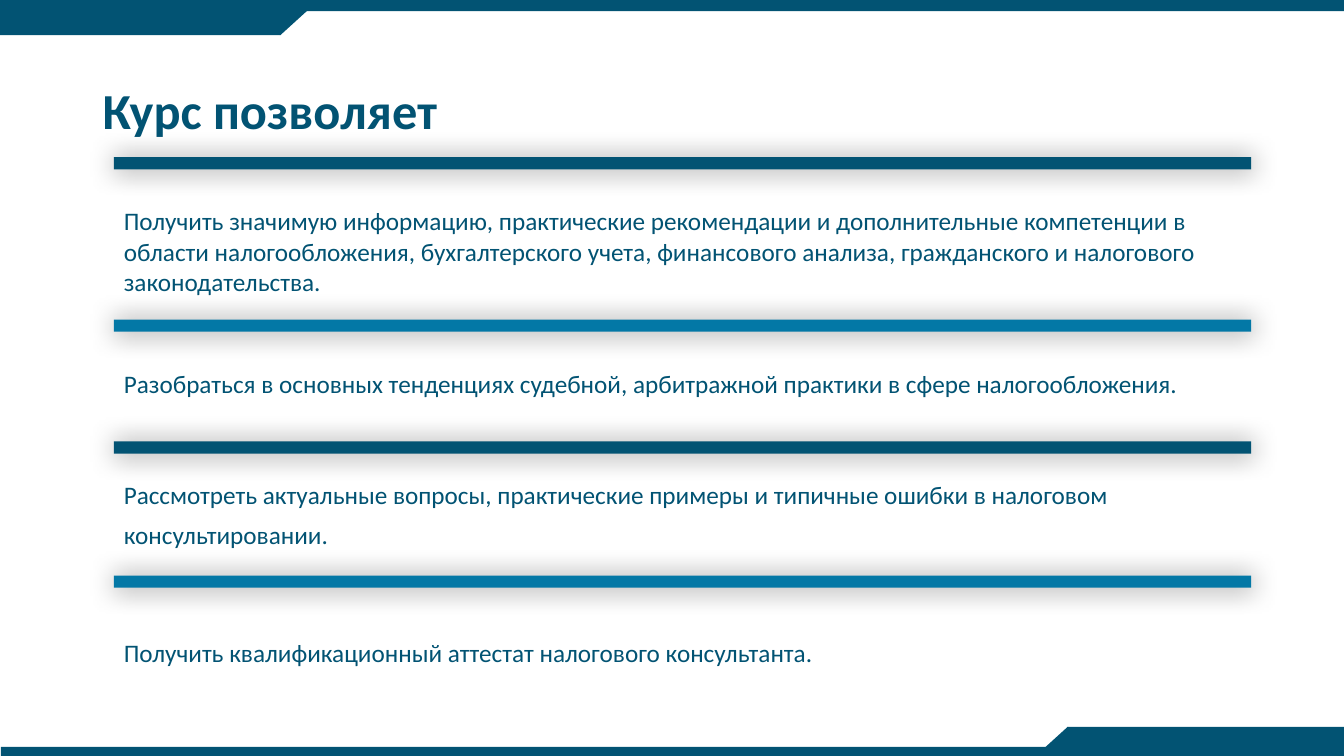
"""Build the slide listing what the course offers."""
from dataclasses import dataclass

from lxml.etree import SubElement
from pptx import Presentation
from pptx.dml.color import RGBColor
from pptx.enum.shapes import MSO_SHAPE
from pptx.enum.text import MSO_ANCHOR
from pptx.oxml.ns import qn
from pptx.util import Inches, Pt


@dataclass(frozen=True)
class Theme:
    font: str = "Calibri"
    dark: str = "025373"
    bright: str = "0378A6"
    shadow: str = "000000"
    title_size: int = 36
    body_size: int = 18


THEME = Theme()
WIDTH, HEIGHT = 13.33, 7.5
TITLE = "Курс позволяет"
LEFT, COLUMN = 1.13, 11.28
EDGE, RULE = 0.11, 0.12
TAB_WIDTH, TAB_HEIGHT, TAB_TOP = 2.78, 0.3, 0.05
SLANT = 0.66
BENEFITS = [
    dict(text="Получить значимую информацию, практические рекомендации и дополнительные компетенции "
              "в области налогообложения, бухгалтерского учета, финансового анализа, гражданского "
              "и налогового законодательства.",
         rule_top=1.56, text_top=1.99, height=1.31, spacing=1.0),
    dict(text="Разобраться в основных тенденциях судебной, арбитражной практики в сфере налогообложения.",
         rule_top=3.17, text_top=3.52, height=0.46, spacing=1.3),
    dict(text="Рассмотреть актуальные вопросы, практические примеры и типичные ошибки в налоговом "
              "консультировании.",
         rule_top=4.38, text_top=4.62, height=0.86, spacing=1.3),
    dict(text="Получить квалификационный аттестат налогового консультанта.",
         rule_top=5.71, text_top=6.18, height=0.46, spacing=1.3),
]


def add_block(slide, left, top, width, height, color=THEME.dark, kind=MSO_SHAPE.RECTANGLE, rotation=0):
    shape = slide.shapes.add_shape(kind, Inches(left), Inches(top), Inches(width), Inches(height))
    shape.shadow.inherit = False
    shape.fill.solid()
    shape.fill.fore_color.rgb = RGBColor.from_string(color)
    shape.line.fill.background()
    shape.rotation = rotation
    return shape


def add_glow(shape):
    effects = shape._element.spPr.find(qn("a:effectLst"))
    shadow = SubElement(effects, qn("a:outerShdw"), blurRad=str(Pt(19)), dist="0", dir="0",
                        algn="ctr", rotWithShape="0")
    color = SubElement(shadow, qn("a:srgbClr"), val=THEME.shadow)
    SubElement(color, qn("a:alpha"), val="40000")


def add_text(slide, text, left, top, width, height, size=THEME.body_size, bold=False,
             spacing=1.0, anchor=MSO_ANCHOR.TOP):
    box = slide.shapes.add_textbox(Inches(left), Inches(top), Inches(width), Inches(height))
    frame = box.text_frame
    frame.word_wrap = True
    frame.vertical_anchor = anchor
    paragraph = frame.paragraphs[0]
    paragraph.line_spacing = spacing
    run = paragraph.add_run()
    run.text = text
    run.font.name = THEME.font
    run.font.size = Pt(size)
    run.font.bold = bold
    run.font.color.rgb = RGBColor.from_string(THEME.dark)


def add_frame(slide):
    tab_bottom = HEIGHT - TAB_HEIGHT
    tab_right = WIDTH - TAB_WIDTH + 0.04
    add_block(slide, 0, 0, WIDTH, EDGE)
    add_block(slide, 0.01, HEIGHT - EDGE + 0.02, WIDTH - 0.01, EDGE - 0.02)
    add_block(slide, 0, TAB_TOP, TAB_WIDTH, TAB_HEIGHT)
    add_block(slide, tab_right, tab_bottom + 0.01, WIDTH - tab_right, TAB_HEIGHT - 0.01)
    for corner, top, rotation in [(TAB_WIDTH, TAB_TOP, 0), (tab_right, tab_bottom + 0.01, 180)]:
        add_block(slide, corner - SLANT / 2, top, SLANT, TAB_HEIGHT,
                  kind=MSO_SHAPE.FLOWCHART_MERGE, rotation=rotation)


def main():
    presentation = Presentation()
    presentation.slide_width, presentation.slide_height = Inches(WIDTH), Inches(HEIGHT)
    slide = presentation.slides.add_slide(presentation.slide_layouts[6])
    add_frame(slide)
    add_text(slide, TITLE, 0.92, 0.4, 11.5, 1.45, size=THEME.title_size, bold=True,
             spacing=0.9, anchor=MSO_ANCHOR.MIDDLE)
    for index, benefit in enumerate(BENEFITS):
        color = THEME.bright if index % 2 else THEME.dark
        add_glow(add_block(slide, LEFT, benefit["rule_top"], COLUMN, RULE, color))
        add_text(slide, benefit["text"], LEFT, benefit["text_top"], COLUMN, benefit["height"],
                 spacing=benefit["spacing"])
    presentation.save("out.pptx")


if __name__ == "__main__":
    main()
